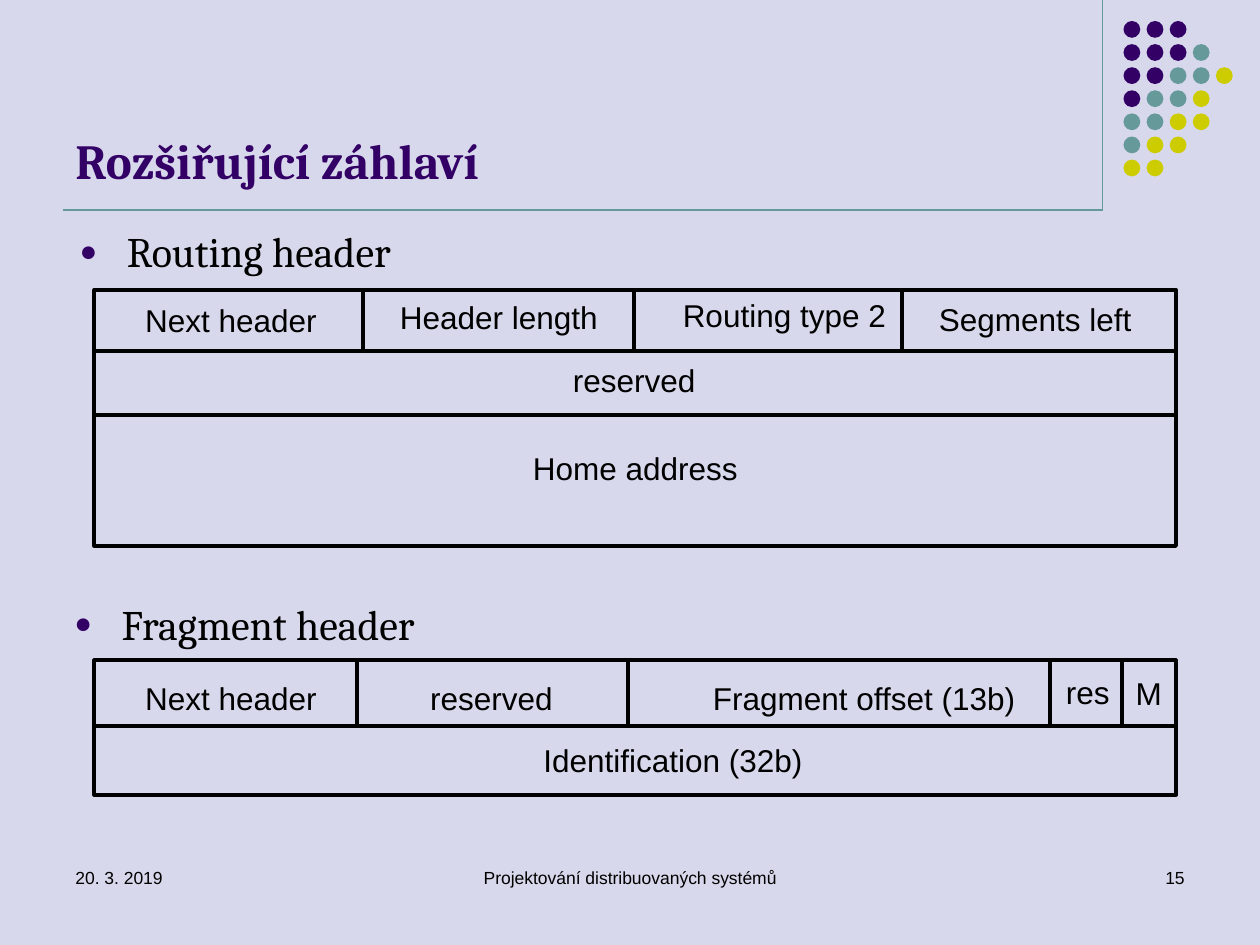
from lxml import etree
from pptx import Presentation
from pptx.dml.color import RGBColor
from pptx.enum.shapes import MSO_CONNECTOR, MSO_SHAPE
from pptx.enum.text import MSO_ANCHOR, PP_ALIGN
from pptx.oxml.ns import qn
from pptx.util import Inches, Pt

LEFT, CENTER, RIGHT = PP_ALIGN.LEFT, PP_ALIGN.CENTER, PP_ALIGN.RIGHT
TOP, MIDDLE, BOTTOM = MSO_ANCHOR.TOP, MSO_ANCHOR.MIDDLE, MSO_ANCHOR.BOTTOM
STRAIGHT = MSO_CONNECTOR.STRAIGHT
RECTANGLE, OVAL = MSO_SHAPE.RECTANGLE, MSO_SHAPE.OVAL

COLORS = {"background": "D8D8EC", "purple": "330066", "teal": "669999",
          "yellow": "CCCC00", "black": "000000"}
HEADING_FONT, BODY_FONT = "Cambria", "Arial"

# The slide is a grid of 120 columns by 90 rows, twelve to the inch.
COLUMNS, ROWS = 120, 90

DOT_ROWS = ["PPP", "PPPT", "PPTTY", "PTTY", "TTYY", "TYY", "YY"]
DOT_COLORS = {"P": "purple", "T": "teal", "Y": "yellow"}

# Labels: text, centre column, centre row and width, measured in the diagram box
ROUTING_LABELS = [
    ("Next header", 13, 2.9, 19),
    ("Header length", 38.5, 2.6, 21.5),
    ("Routing type 2", 65.7, 2.4, 22),
    ("Segments left", 89.6, 2.8, 20.9),
    ("reserved", 51.4, 8.6, 14.2),
    ("Home address", 51.5, 17, 22.1),
]
FRAGMENT_LABELS = [
    ("Next header", 13, 3.6, 19),
    ("reserved", 37.8, 3.6, 14.2),
    ("Fragment offset (13b)", 73.3, 3.6, 31.4),
    ("res", 94.6, 3, 6.6),
    ("M", 100.4, 3.1, 4.9),
    ("Identification (32b)", 55.1, 9.5, 27.4),
]


def grid(value):
    return Inches(value / 12)


def rgb(name):
    return RGBColor.from_string(COLORS[name])


def add_text(slide, text, box, size=18, font=BODY_FONT, color="black", bold=False,
             align=LEFT, anchor=TOP, wrap=True, bullet=False):
    frame = slide.shapes.add_textbox(*map(grid, box)).text_frame
    frame.word_wrap = wrap
    frame.vertical_anchor = anchor
    paragraph = frame.paragraphs[0]
    paragraph.text = text
    paragraph.alignment = align
    if bullet:
        add_bullet(paragraph)
    paragraph.font.size = Pt(size)
    paragraph.font.name = font
    paragraph.font.bold = bold
    paragraph.font.color.rgb = rgb(color)


def add_bullet(paragraph):
    properties = paragraph._p.get_or_add_pPr()
    indent = grid(4.5)
    properties.set("marL", str(indent))
    properties.set("indent", str(-indent))
    color = etree.SubElement(properties, qn("a:buClr"))
    etree.SubElement(color, qn("a:srgbClr"), val=COLORS["purple"])
    etree.SubElement(properties, qn("a:buSzPct"), val="70000")
    etree.SubElement(properties, qn("a:buFont"), typeface=BODY_FONT)
    etree.SubElement(properties, qn("a:buChar"), char="●")


def add_line(slide, start, end, color="black", width=2.25):
    line = slide.shapes.add_connector(STRAIGHT, *map(grid, (*start, *end)))
    line.line.color.rgb = rgb(color)
    line.line.width = Pt(width)
    etree.SubElement(line._element.spPr, qn("a:effectLst"))


def add_shape(slide, kind, box):
    shape = slide.shapes.add_shape(kind, *map(grid, box))
    shape.shadow.inherit = False
    return shape


def draw_dots(slide, left, top, pitch, diameter):
    for row, codes in enumerate(DOT_ROWS):
        for column, code in enumerate(codes):
            box = (left + column * pitch, top + row * pitch, diameter, diameter)
            dot = add_shape(slide, OVAL, box)
            dot.fill.solid()
            dot.fill.fore_color.rgb = rgb(DOT_COLORS[code])
            dot.line.fill.background()


def draw_title(slide, text, box):
    left, top, width, height = box
    right, rule = left + width, 20
    add_line(slide, (right, 0), (right, rule), "teal", 0.75)
    add_line(slide, (left, rule), (right, rule), "teal", 0.75)
    add_text(slide, text, box, size=28, font=HEADING_FONT, color="purple",
             bold=True, anchor=BOTTOM)


def draw_header_diagram(slide, box, row_lines, dividers, labels):
    left, top, width, height = box
    outline = add_shape(slide, RECTANGLE, box)
    outline.fill.background()
    outline.line.color.rgb = rgb("black")
    outline.line.width = Pt(2.25)
    # Lines between rows, then dividers within the first row
    for row in row_lines:
        add_line(slide, (left, top + row), (left + width, top + row))
    for column in dividers:
        add_line(slide, (left + column, top), (left + column, top + row_lines[0]))
    # Field names
    label_height = 4.8
    for text, column, row, label_width in labels:
        label_box = (left + column - label_width / 2, top + row - label_height / 2,
                     label_width, label_height)
        add_text(slide, text, label_box, align=CENTER, anchor=MIDDLE, wrap=False)


def draw_footer(slide, top, height):
    for text, left, width, align in [
        ("20. 3. 2019", 6, 28, LEFT),
        ("Projektování distribuovaných systémů", 41, 38, CENTER),
        ("15", 86, 28, RIGHT),
    ]:
        add_text(slide, text, (left, top, width, height), size=10, align=align)


def main():
    presentation = Presentation()
    presentation.slide_width, presentation.slide_height = grid(COLUMNS), grid(ROWS)
    slide = presentation.slides.add_slide(presentation.slide_layouts[6])
    slide.background.fill.solid()
    slide.background.fill.fore_color.rgb = rgb("background")

    # Title and decoration
    draw_dots(slide, left=107, top=2, pitch=2.2, diameter=1.6)
    draw_title(slide, "Rozšiřující záhlaví", (6, 1.6, 99, 17))

    # Section headings
    for text, left, top in [("Routing header", 6.4, 20.9),
                            ("Fragment header", 5.9, 56.4)]:
        add_text(slide, text, (left, top, 108, 6.5), size=24,
                 font=HEADING_FONT, bullet=True)

    # Header diagrams
    draw_header_diagram(slide, (9, 27.6, 103, 24.4), [5.8, 11.9],
                        [25.6, 51.4, 76.9], ROUTING_LABELS)
    draw_header_diagram(slide, (9, 62.9, 103, 12.8), [6.2],
                        [25, 50.8, 91, 97.9], FRAGMENT_LABELS)

    draw_footer(slide, top=82, height=6)
    presentation.save("out.pptx")


if __name__ == "__main__":
    main()
